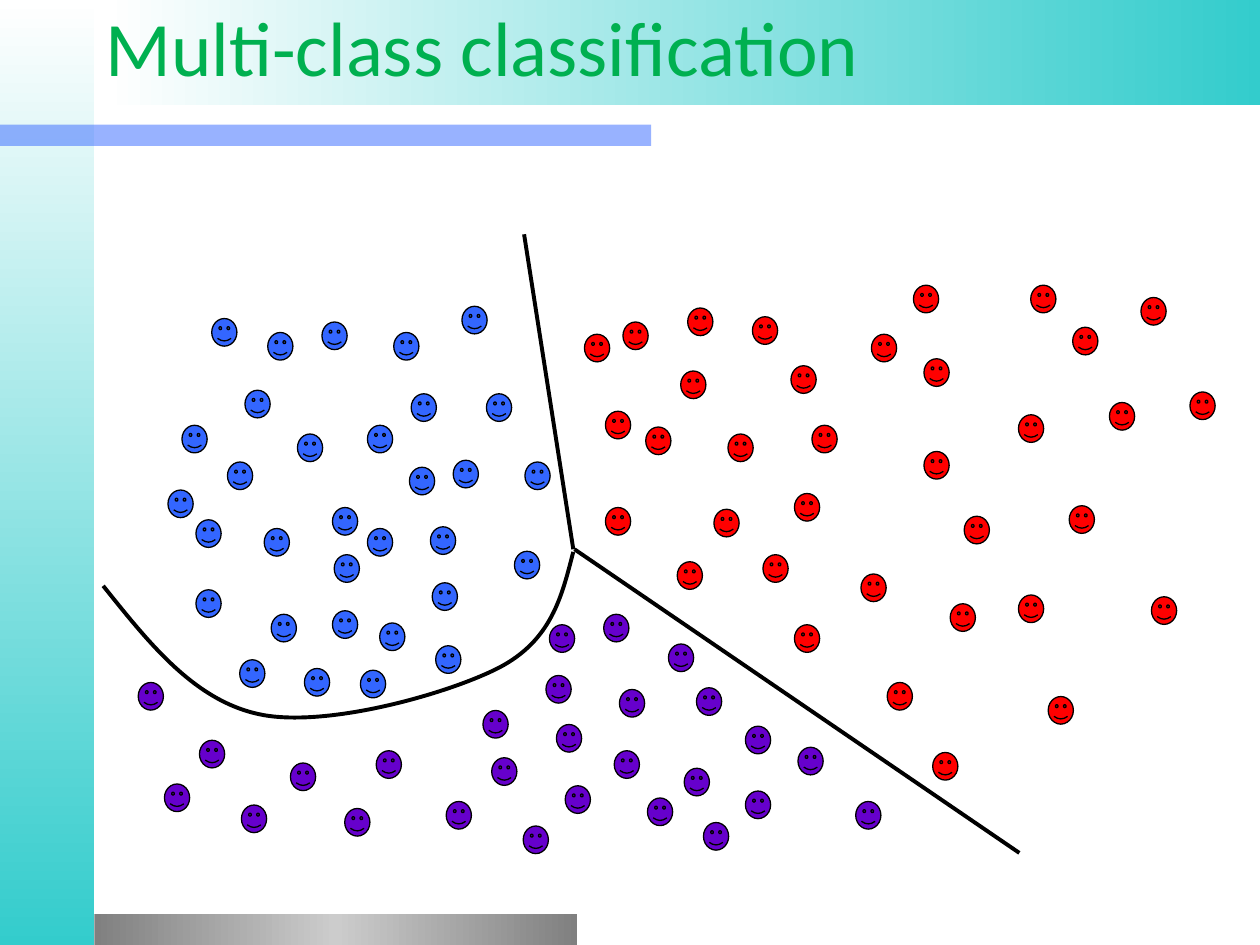
from copy import deepcopy

from lxml import etree
from pptx import Presentation, util as u
from pptx.dml.color import RGBColor
from pptx.enum import shapes, text
from pptx.oxml.ns import qn

Pt = u.Pt
HUES = {
    "white": "FFFFFF", "teal": "33CCCC", "grey": "808080", "silver": "CCCCCC",
    "green": "00B050", "black": "000000",
    "blue": "3366FF", "red": "FF0000", "purple": "6600CC",
}

# Top left corner of each face, by class
FACES = {
    "blue": [
        (170, 248), (210, 243), (235, 225), (155, 351), (151, 302), (259, 263),
        (190, 349), (112, 337), (130, 264), (210, 302), (246, 301), (217, 356),
        (247, 333), (300, 264), (249, 369), (206, 383), (234, 267), (112, 297),
        (174, 382), (190, 290), (278, 225), (137, 377), (184, 184), (294, 315),
        (191, 317), (121, 182), (96, 280), (264, 175), (104, 243), (225, 190),
        (140, 223), (153, 190)],
    "red": [
        (346, 235), (356, 184), (389, 212), (393, 176), (430, 181), (334, 191),
        (369, 244), (528, 258), (408, 291), (454, 282), (522, 163), (416, 248),
        (464, 243), (387, 321), (436, 317), (528, 205), (454, 357), (582, 237),
        (492, 328), (589, 163), (452, 209), (346, 290), (652, 170), (599, 398),
        (634, 230), (533, 430), (611, 289), (582, 340), (551, 295), (498, 191),
        (613, 187), (680, 224), (543, 345), (658, 341), (507, 390)],
    "purple": [
        (314, 357), (312, 386), (276, 406), (318, 414), (354, 394), (398, 393),
        (351, 429), (426, 415), (391, 439), (426, 452), (382, 368), (281, 433),
        (370, 456), (323, 449), (345, 351), (402, 470), (489, 458), (456, 427),
        (215, 429), (94, 448), (255, 458), (299, 472), (166, 436), (79, 390),
        (138, 460), (197, 462), (114, 423)],
}
# Start point, then three points for each Bezier segment
CURVE = [(59, 334.8),
         (85, 367.2), (110.9, 400.3), (148.3, 408.2),
         (185.8, 416.2), (255.6, 396.7), (285.1, 381.6),
         (315.4, 365.8), (321.1, 340.6), (327.6, 315.4)]


def hue(name):
    return RGBColor.from_string(HUES[name])


class Deck:
    font = "Calibri"
    size = 44
    thin, thick = 0.75, 2.25
    face_w, face_h = 14.4, 15.8

    def __init__(self):
        self.prs = Presentation()
        self.prs.slide_width, self.prs.slide_height = Pt(720), Pt(540)
        self.slide = self.prs.slides.add_slide(self.prs.slide_layouts[6])

    def group(self):
        return self.slide.shapes.add_group_shape()

    def rect(self, x, y, w, h):
        bar = self.slide.shapes.add_shape(
            shapes.MSO_SHAPE.RECTANGLE, Pt(x), Pt(y), Pt(w), Pt(h))
        bar.shadow.inherit = False
        bar.line.fill.background()
        return bar

    def fade(self, box, names, angle=0):
        fill = self.rect(*box).fill
        fill.gradient()
        fill.gradient_angle = angle
        stops = fill._fill._gradFill.find(qn("a:gsLst"))
        for _ in names[2:]:
            stops.append(deepcopy(stops[-1]))
        for i, (stop, name) in enumerate(zip(fill.gradient_stops, names)):
            stop.color.rgb = hue(name)
            stop.position = i / (len(names) - 1)

    def tint(self, box, name, alpha):
        fill = self.rect(*box).fill
        fill.solid()
        fill.fore_color.rgb = hue(name)
        clr = fill._xPr.find(".//" + qn("a:srgbClr"))
        etree.SubElement(clr, qn("a:alpha"), val=str(alpha * 1000))

    def title(self, box, words):
        area = self.slide.shapes.add_textbox(*map(Pt, box))
        frame = area.text_frame
        frame.word_wrap = True
        frame.vertical_anchor = text.MSO_ANCHOR.MIDDLE
        para = frame.paragraphs[0]
        para.text = words
        para.font.name, para.font.size = self.font, Pt(self.size)
        para.font.color.rgb = hue("green")

    def stroke(self, item, width):
        item.line.color.rgb = hue("black")
        item.line.width = Pt(width)

    def face(self, group, x, y, name):
        face = group.shapes.add_shape(
            shapes.MSO_SHAPE.SMILEY_FACE, Pt(x), Pt(y),
            Pt(self.face_w), Pt(self.face_h))
        face.shadow.inherit = False
        face.fill.solid()
        face.fill.fore_color.rgb = hue(name)
        self.stroke(face, self.thin)

    def line(self, group, start, end):
        line = group.shapes.add_connector(
            shapes.MSO_CONNECTOR.STRAIGHT, *map(Pt, start + end))
        self.stroke(line, self.thick)
        etree.SubElement(line._element.spPr, qn("a:effectLst"))

    def curve(self, group, points):
        start, *rest = [(Pt(x), Pt(y)) for x, y in points]
        pen = group.shapes.build_freeform(*start)
        pen.add_line_segments(rest, close=False)
        curve = pen.convert_to_shape()
        curve.shadow.inherit = False
        curve.fill.background()
        self.stroke(curve, self.thick)
        # Every three straight steps become one Bezier segment
        steps = curve._element.findall(".//" + qn("a:lnTo"))
        route = steps[0].getparent()
        for i in range(0, len(steps), 3):
            bend = etree.SubElement(route, qn("a:cubicBezTo"))
            for step in steps[i:i + 3]:
                bend.append(step[0])
                route.remove(step)


def main():
    deck = Deck()

    # Background bars
    deck.fade((0, 0, 54, 540), ["white", "teal"], 270)
    deck.fade((54, 522, 275.8, 18), ["grey", "silver", "grey"])
    deck.fade((60.5, 0, 659.5, 59.8), ["white", "teal"])
    deck.tint((0, 71.3, 372.2, 12.2), "blue", 50)

    deck.title((53.3, -7.9, 647.3, 68.4), "Multi-class classification")

    # Data points of the three classes
    crowd = deck.group()
    for name, spots in FACES.items():
        for x, y in spots:
            deck.face(crowd, x, y, name)

    # Class borders
    border = deck.group()
    deck.curve(border, CURVE)
    deck.line(border, (327.6, 313.9), (299.5, 133.9))
    deck.line(border, (328.3, 313.9), (582.5, 487.4))

    deck.prs.save("out.pptx")


if __name__ == "__main__":
    main()
